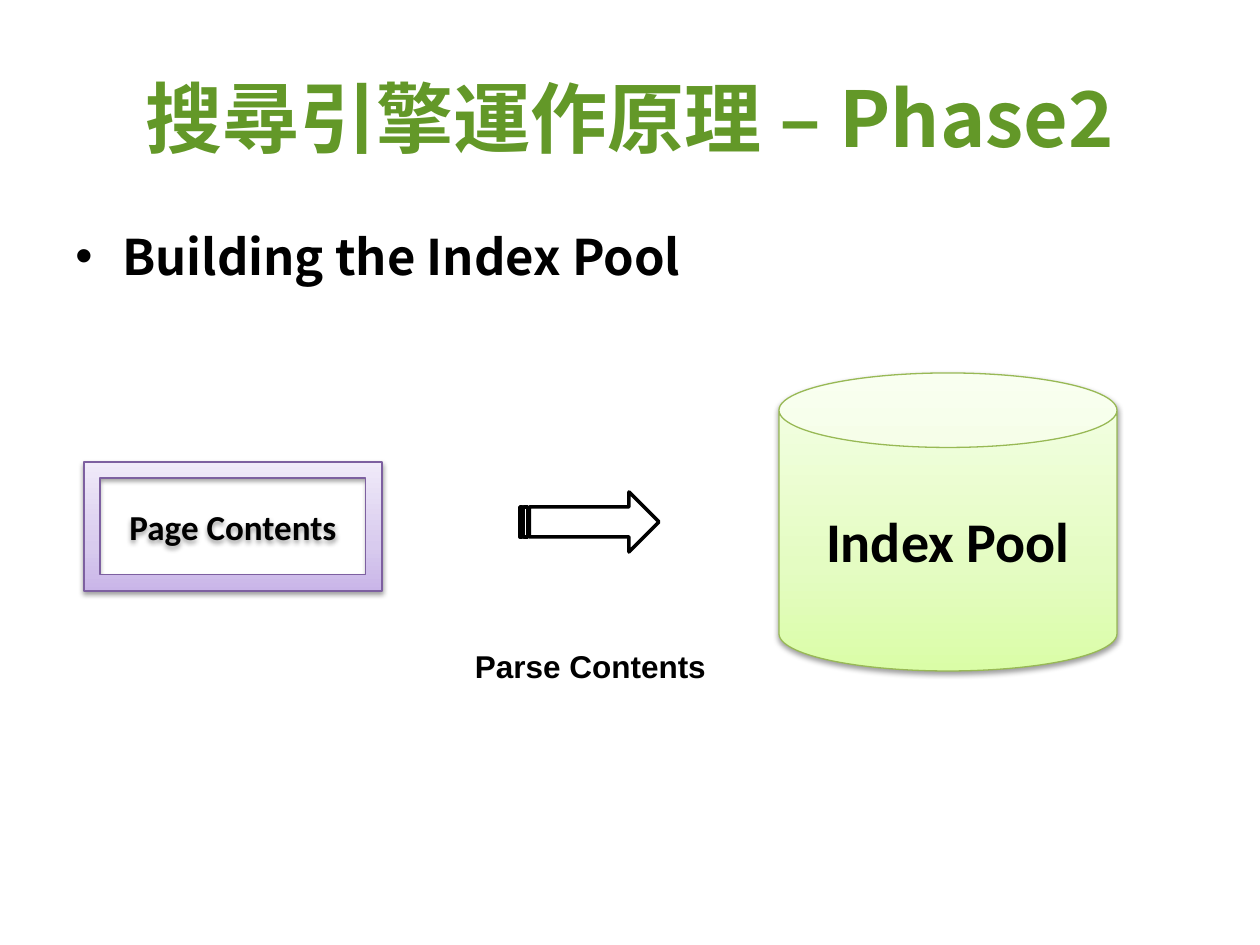
"""Build the slide on phase 2 of a search engine: building the index pool."""
from lxml import etree
from pptx import Presentation, util as u
from pptx.dml.color import RGBColor
from pptx.enum import shapes, text
from pptx.oxml import parse_xml
from pptx.oxml.ns import nsdecls, qn

EMU_PER_PX = 914400 / 126
NOTO = "Noto Sans CJK SC"
COLORS = {"title": "639828", "ink": "000000", "paper": "FFFFFF",
          "frame_line": "7D60A0", "can_line": "98B955"}
GRADIENTS = {"frame": ("C9B5E8", "D8CBEE", "F0EAF9"),
             "can": ("DAFDA7", "E4FCC2", "F5FFE7")}
STOPS = (0, 35000, 100000)


def box(*px):
    return [u.Emu(round(v * EMU_PER_PX)) for v in px]


def write(sp, words, size, name, color="ink", align="CENTER", anchor="MIDDLE"):
    tf = sp.text_frame
    tf.word_wrap = True
    tf.vertical_anchor = text.MSO_ANCHOR[anchor]
    p = tf.paragraphs[0]
    p.alignment = text.PP_ALIGN[align]
    r = p.add_run()
    r.text = words
    for key, value in {"size": u.Pt(size), "name": name, "bold": True}.items():
        setattr(r.font, key, value)
    r.font.color.rgb = RGBColor.from_string(COLORS[color])
    etree.SubElement(r._r.get_or_add_rPr(), qn("a:ea"), typeface=name)
    return p


prs = Presentation()
prs.slide_width, prs.slide_height = box(1260, 945)
s = prs.slides.add_slide(prs.slide_layouts[5])

title = s.shapes.title
title.left, title.top, title.width, title.height = box(63, 38, 1134, 157)
write(title, "搜尋引擎運作原理 – Phase2", 44, NOTO, "title")

body = s.shapes.add_textbox(*box(63, 220, 1134, 609))
p = write(body, "Building the Index Pool", 28, NOTO, align="LEFT", anchor="TOP")
pPr = p._p.get_or_add_pPr()
indent = box(47)[0]
pPr.set("marL", str(indent))
pPr.set("indent", str(-indent))
etree.SubElement(pPr, qn("a:buFont"), typeface="Arial")
etree.SubElement(pPr, qn("a:buChar"), char="•")

for kind, place, words, size in (
        ("frame", (84, 462, 298, 129), "Page Contents", 20),
        ("can", (779, 373, 338, 298), "Index Pool", 32)):
    sp = s.shapes.add_shape(shapes.MSO_SHAPE[kind.upper()], *box(*place))
    sp.shadow.inherit = False
    sp.fill.gradient()
    sp.line.color.rgb = RGBColor.from_string(COLORS[f"{kind}_line"])
    sp.line.width = u.Pt(0.75)
    spPr = sp._element.spPr
    stops = "".join(f'<a:gs pos="{pos}"><a:srgbClr val="{c}"/></a:gs>'
                    for pos, c in zip(STOPS, GRADIENTS[kind]))
    spPr.replace(spPr.find(qn("a:gradFill")), parse_xml(
        f'<a:gradFill {nsdecls("a")} rotWithShape="1"><a:gsLst>{stops}</a:gsLst>'
        '<a:lin ang="16200000" scaled="1"/></a:gradFill>'))
    spPr.find(qn("a:effectLst")).append(parse_xml(
        f'<a:outerShdw {nsdecls("a")} blurRad="{u.Pt(3.1)}" dist="{u.Pt(1.6)}" '
        'dir="5400000" rotWithShape="0"><a:srgbClr val="000000">'
        '<a:alpha val="38000"/></a:srgbClr></a:outerShdw>'))
    write(sp, words, size, "Calibri")

arrow = s.shapes.add_shape(shapes.MSO_SHAPE.STRIPED_RIGHT_ARROW,
                           *box(520, 492, 139, 60))
arrow.shadow.inherit = False
arrow.fill.solid()
arrow.fill.fore_color.rgb = RGBColor.from_string(COLORS["paper"])
arrow.line.color.rgb = RGBColor.from_string(COLORS["ink"])
arrow.line.width = u.Pt(2)

label = s.shapes.add_textbox(*box(402, 641, 377, 51))
write(label, "Parse Contents", 18, "Arial", anchor="TOP")
label.text_frame.auto_size = text.MSO_AUTO_SIZE.SHAPE_TO_FIT_TEXT

prs.save("out.pptx")
